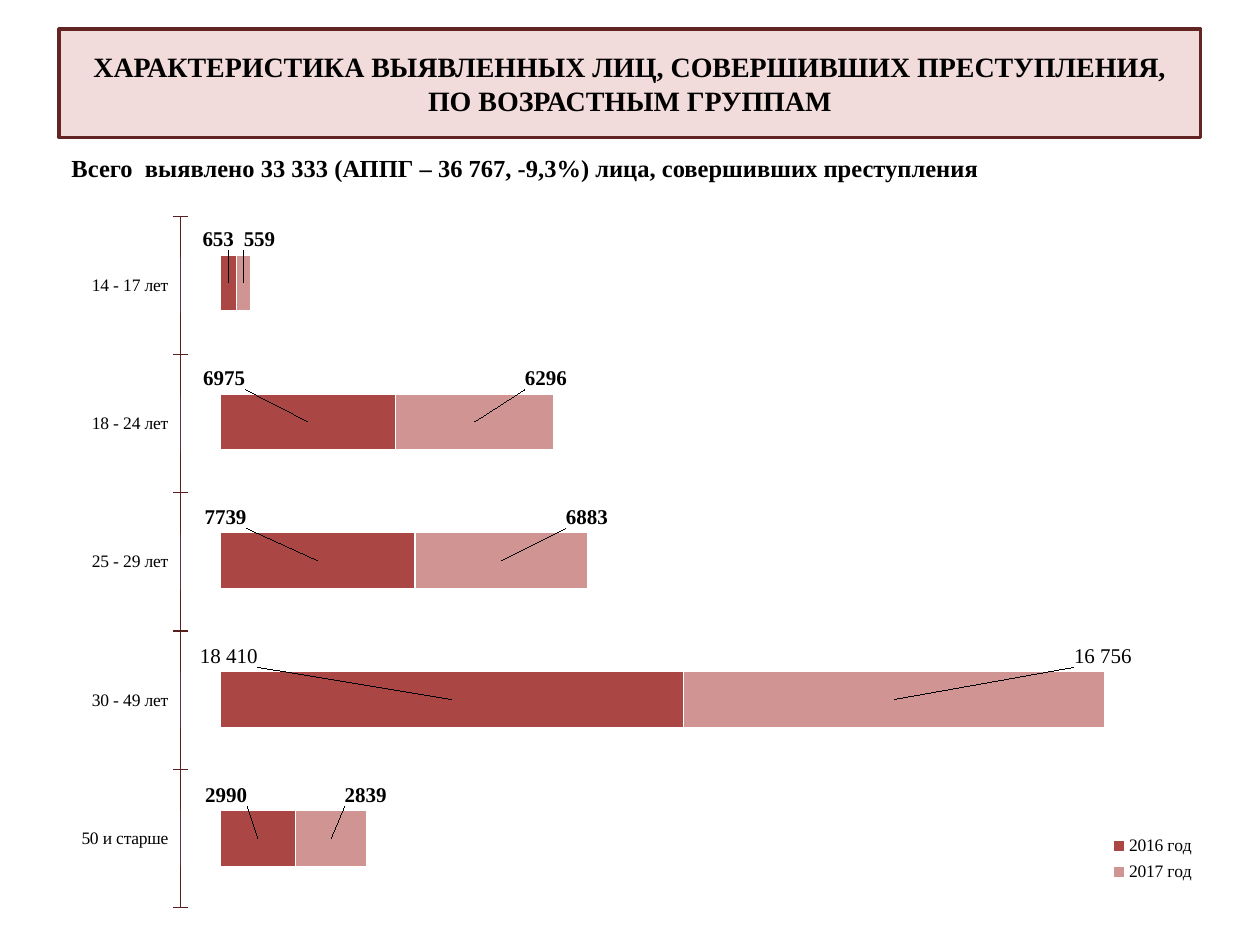
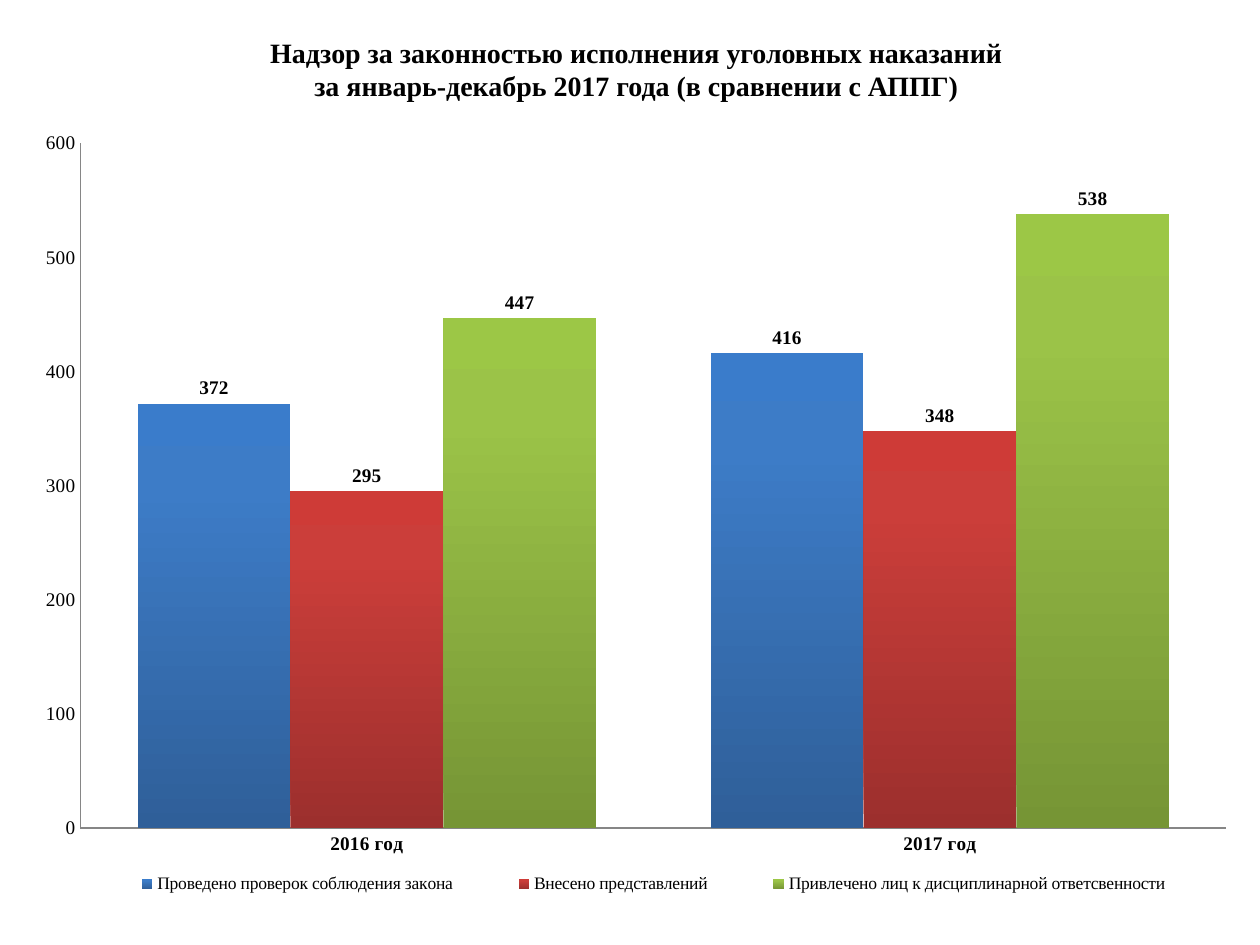
from lxml.etree import SubElement
from pptx import Presentation
from pptx.chart.data import CategoryChartData
from pptx.dml.color import RGBColor
from pptx.enum.chart import XL_CHART_TYPE, XL_LEGEND_POSITION, XL_TICK_LABEL_POSITION, XL_TICK_MARK
from pptx.enum.text import MSO_ANCHOR, MSO_AUTO_SIZE, PP_ALIGN
from pptx.oxml import parse_xml
from pptx.oxml.ns import nsdecls, qn
from pptx.util import Pt

SERIF = "Times New Roman"
BLACK = "000000"
AXIS_GREY = "868686"

AGE_TITLE = "ХАРАКТЕРИСТИКА ВЫЯВЛЕННЫХ ЛИЦ, СОВЕРШИВШИХ ПРЕСТУПЛЕНИЯ, ПО ВОЗРАСТНЫМ ГРУППАМ"
AGE_TOTAL = "Всего  выявлено 33 333 (АППГ – 36 767, -9,3%) лица, совершивших преступления"
AGE_GROUPS = ["50 и старше", "30 - 49 лет", "25 - 29 лет", "18 - 24 лет", "14 - 17 лет"]
AGE_SERIES = [
    {"name": "2016 год", "values": [2990, 18410, 7739, 6975, 653], "color": "AA4643",
     "spelled": {1: "18 410"}, "shifts": [3.4, 4.9, 3.1, 2.3, -1.1]},
    {"name": "2017 год", "values": [2839, 16756, 6883, 6296, 559], "color": "D09493",
     "spelled": {1: "16 756"}, "shifts": [-0.6, -1.1, -0.6, -4.6, 5.1]},
]
AGE_MAXIMUM = 40000
AGE_BARS_BOX = (26.6, 112.3, 679.7, 418.3)
AGE_BARS_PLOT = (0.146, 0.023, 0.846, 0.949)
LABEL_RISE = 24.8

AXIS_SERIES = [
    {"name": "Series 1", "values": [0] * 5, "color": "4F81BD"},
    {"name": "Series 2", "values": [0] * 5, "color": "C0504D"},
]

SUPERVISION_TITLE = ("Надзор за законностью исполнения уголовных наказаний\n"
                     "за январь-декабрь 2017 года (в сравнении с АППГ)")
YEARS = ["2016 год", "2017 год"]
SUPERVISION_SERIES = [
    {"name": "Проведено проверок соблюдения закона", "values": [372, 416],
     "color": ["2F5F99", "3D7CC7", "3A7CCB"]},
    {"name": "Внесено представлений", "values": [295, 348],
     "color": ["9C2F2D", "CB3E3A", "CE3B37"]},
    {"name": "Привлечено лиц к дисциплинарной ответсвенности", "values": [447, 538],
     "color": ["769535", "9BC348", "9CC746"]},
]
GRADIENT_STOPS = [0, 80, 100]


def color(value):
    return RGBColor.from_string(value)


def set_font(font, size, bold=False, name=SERIF):
    font.name = name
    font.size = Pt(size)
    font.bold = bold
    font.color.rgb = color(BLACK)


def write(shape, text, size=16, bold=True, align=PP_ALIGN.CENTER, anchor=MSO_ANCHOR.MIDDLE):
    frame = shape.text_frame
    frame.word_wrap = True
    frame.auto_size = MSO_AUTO_SIZE.NONE
    frame.vertical_anchor = anchor
    paragraph = frame.paragraphs[0]
    paragraph.alignment = align
    for number, line in enumerate(text.split("\n")):
        if number:
            paragraph.add_line_break()
        run = paragraph.add_run()
        run.text = line
        set_font(run.font, size, bold)


def add_title(slide, text, left, top, width, height):
    title = slide.shapes.title
    title.left, title.top, title.width, title.height = map(Pt, (left, top, width, height))
    write(title, text)
    return title


def set_layout(parent, index, **settings):
    for existing in parent.findall(qn("c:layout")):
        parent.remove(existing)
    layout = parse_xml(f"<c:layout {nsdecls('c')}/>")
    manual = SubElement(layout, qn("c:manualLayout"))
    for tag, value in settings.items():
        SubElement(manual, qn(f"c:{tag}")).set("val", str(value))
    parent.insert(index, layout)


def set_box(parent, index, box, **target):
    set_layout(parent, index, **target, xMode="edge", yMode="edge", **dict(zip("xywh", box)))


def fill_gradient(series_element, colors):
    stops = "".join(f'<a:gs pos="{stop * 1000}"><a:srgbClr val="{value}"/></a:gs>'
                    for stop, value in zip(GRADIENT_STOPS, colors))
    gradient = parse_xml(f'<a:gradFill {nsdecls("a")} rotWithShape="1"><a:gsLst>{stops}</a:gsLst>'
                         '<a:lin ang="16200000" scaled="0"/></a:gradFill>')
    solid = series_element.find(qn("c:spPr")).find(qn("a:solidFill"))
    solid.getparent().replace(solid, gradient)


def add_bar_chart(slide, kind, box, plot_box, categories, rows, gap, overlap, maximum):
    data = CategoryChartData()
    data.categories = categories
    for row in rows:
        data.add_series(row["name"], row["values"])
    chart = slide.shapes.add_chart(kind, *map(Pt, box), data).chart
    set_font(chart.font, 10, name="Calibri")
    chart.has_title = False
    chart.has_legend = False
    plot = chart.plots[0]
    plot.vary_by_categories = False
    plot.gap_width = gap
    plot.overlap = overlap
    chart.value_axis.minimum_scale = 0
    chart.value_axis.maximum_scale = maximum
    chart.value_axis.has_major_gridlines = False
    set_box(chart.element.xpath(".//c:plotArea")[0], 0, plot_box, layoutTarget="inner")
    for series, row, element in zip(plot.series, rows, chart.element.xpath(".//c:ser")):
        series.invert_if_negative = False
        series.format.fill.solid()
        if isinstance(row["color"], list):
            fill_gradient(element, row["color"])
        else:
            series.format.fill.fore_color.rgb = color(row["color"])
    return chart


def set_axis(axis, size, line_color, bold=False, tick=XL_TICK_MARK.NONE):
    set_font(axis.tick_labels.font, size, bold)
    axis.major_tick_mark = tick
    axis.minor_tick_mark = XL_TICK_MARK.NONE
    axis.format.line.color.rgb = color(line_color)
    axis.format.line.width = Pt(0.75)


def add_legend(chart, position, box):
    chart.has_legend = True
    chart.legend.position = position
    chart.legend.include_in_layout = False
    set_font(chart.legend.font, 10)
    set_box(chart.element.xpath(".//c:legend")[0], 1, box)


def show_values(series, size):
    labels = series.data_labels
    labels.show_value = True
    set_font(labels.font, size, True)


def place_age_labels(chart):
    width, height = AGE_BARS_BOX[2:]
    scale = width * AGE_BARS_PLOT[2] / AGE_MAXIMUM
    elements = chart.element.xpath(".//c:ser")
    for number, (series, row) in enumerate(zip(chart.plots[0].series, AGE_SERIES)):
        show_values(series, 12)
        side = 1 if number else -1
        for index, (value, shift) in enumerate(zip(row["values"], row["shifts"])):
            label = series.points[index].data_label
            if index in row["spelled"]:
                run = label.text_frame.paragraphs[0].add_run()
                run.text = row["spelled"][index]
                set_font(run.font, 12)
            else:
                set_font(label.font, 12, True)
            element = elements[number].xpath(f'.//c:dLbl[c:idx/@val="{index}"]')[0]
            move = side * value * scale / 2 + shift
            set_layout(element, 1, x=round(move / width, 4), y=round(-LABEL_RISE / height, 4))


def build_age_slide(slide):
    title = add_title(slide, AGE_TITLE, 33.8, 16.6, 652.3, 61.9)
    properties = title.element.spPr
    properties.insert(1, parse_xml(f'<a:prstGeom {nsdecls("a")} prst="roundRect"><a:avLst/></a:prstGeom>'))
    title.fill.solid()
    title.fill.fore_color.rgb = color("F2DCDB")
    title.line.color.rgb = color("632523")
    title.line.width = Pt(2)

    total = slide.shapes.add_textbox(Pt(33.8), Pt(84.2), Pt(652.3), Pt(28))
    write(total, AGE_TOTAL, size=14, align=PP_ALIGN.LEFT, anchor=MSO_ANCHOR.TOP)

    stacked = XL_CHART_TYPE.BAR_STACKED
    axis_chart = add_bar_chart(slide, stacked, (-9.4, 112.3, 187.9, 417.6),
                               (0.599, 0.027, 0.342, 0.946), AGE_GROUPS, AXIS_SERIES, 150, 100, 1)
    axis_chart.value_axis.visible = False
    set_axis(axis_chart.category_axis, 10, "57201F", tick=XL_TICK_MARK.CROSS)

    bars = add_bar_chart(slide, stacked, AGE_BARS_BOX, AGE_BARS_PLOT,
                         ["1", "2", "3", "4", "5"], AGE_SERIES, 150, 100, AGE_MAXIMUM)
    bars.value_axis.visible = False
    bars.category_axis.visible = False
    for series in bars.plots[0].series:
        series.format.line.color.rgb = color("FFFFFF")
        series.format.line.width = Pt(0.75)
    place_age_labels(bars)
    add_legend(bars, XL_LEGEND_POSITION.RIGHT, (0.885, 0.865, 0.09, 0.08))


def build_supervision_slide(slide):
    add_title(slide, SUPERVISION_TITLE, 39.6, 11.5, 648, 55.4)
    chart = add_bar_chart(slide, XL_CHART_TYPE.COLUMN_CLUSTERED, (11.5, 67, 702.7, 452.9),
                          (0.049, 0.033, 0.932, 0.864), YEARS, SUPERVISION_SERIES, 75, 0, 600)
    chart.value_axis.major_unit = 100
    chart.value_axis.tick_label_position = XL_TICK_LABEL_POSITION.NEXT_TO_AXIS
    set_axis(chart.value_axis, 11, AXIS_GREY)
    set_axis(chart.category_axis, 11, AXIS_GREY, bold=True)
    for series in chart.plots[0].series:
        show_values(series, 11)
    add_legend(chart, XL_LEGEND_POSITION.BOTTOM, (0.05, 0.945, 0.93, 0.045))


def main():
    presentation = Presentation()
    presentation.slide_width = Pt(720)
    presentation.slide_height = Pt(540)
    title_only = presentation.slide_layouts[5]
    for build in (build_age_slide, build_supervision_slide):
        build(presentation.slides.add_slide(title_only))
    presentation.save("out.pptx")


if __name__ == "__main__":
    main()
